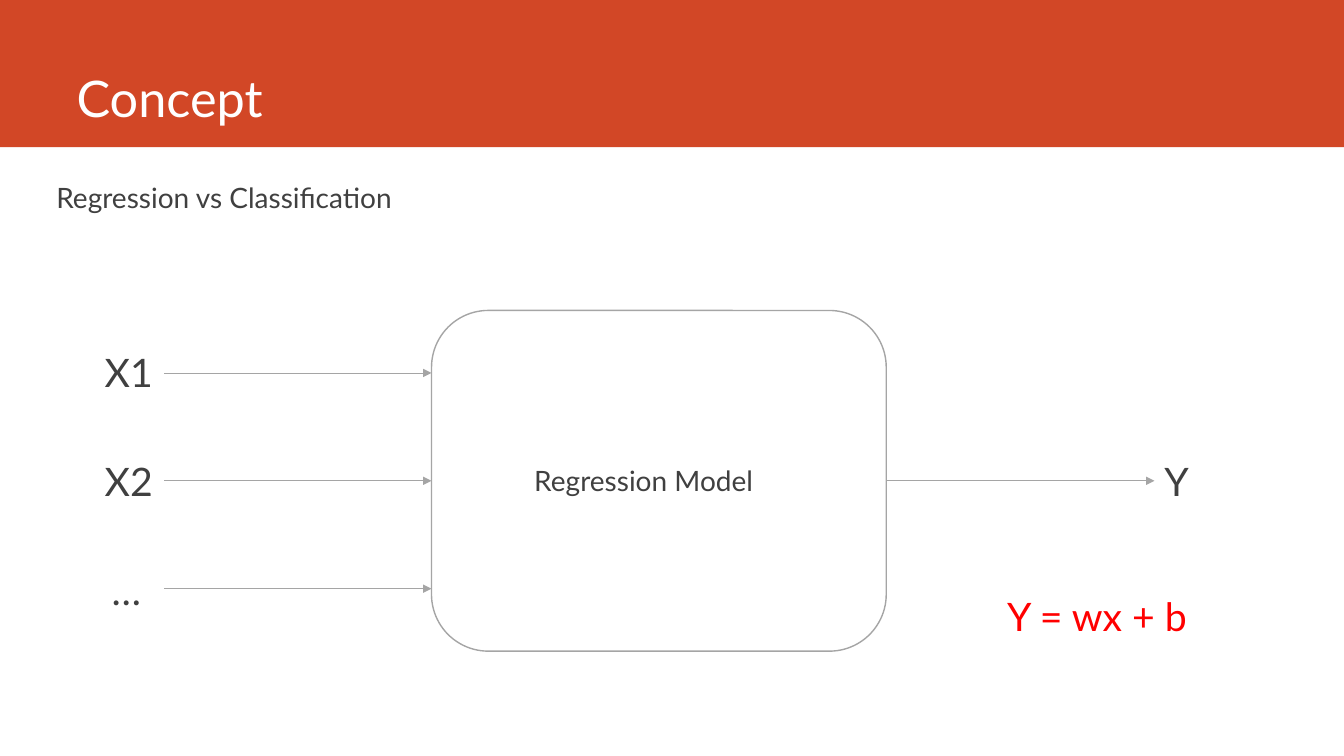
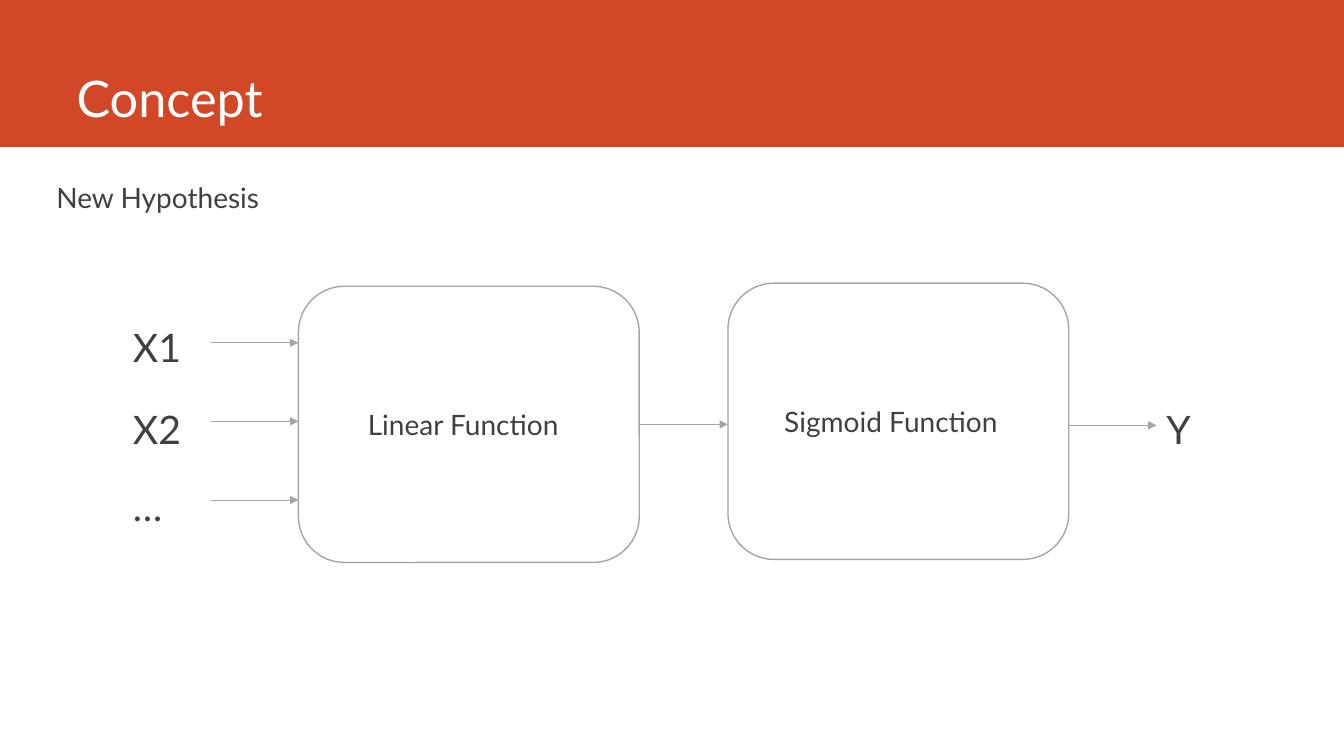
"""Build two slides that show a regression model and a new hypothesis as diagrams."""

from dataclasses import dataclass

from lxml.etree import SubElement
from pptx import Presentation
from pptx.dml.color import RGBColor
from pptx.enum.shapes import MSO_CONNECTOR, MSO_SHAPE
from pptx.enum.text import MSO_ANCHOR, MSO_AUTO_SIZE, PP_ALIGN
from pptx.oxml.ns import qn
from pptx.slide import Slide, SlideLayout
from pptx.text.text import TextFrame
from pptx.util import Inches, Pt


@dataclass(frozen=True)
class Theme:
    font: str = "Lato"
    band: RGBColor = RGBColor(0xD2, 0x47, 0x26)
    white: RGBColor = RGBColor(0xFF, 0xFF, 0xFF)
    text: RGBColor = RGBColor(0x40, 0x40, 0x40)
    accent: RGBColor = RGBColor(0xFF, 0x00, 0x00)
    line: RGBColor = RGBColor(0xA5, 0xA5, 0xA5)
    title_size: int = 36
    symbol_size: int = 28
    label_size: int = 20
    outline_width: float = 1
    arrow_width: float = 0.5


THEME = Theme()
SLIDE_WIDTH = 13.33
SLIDE_HEIGHT = 7.5
BAND_HEIGHT = 1.46


@dataclass(frozen=True)
class Label:
    text: str
    left: float
    top: float
    width: float = 0.8
    size: int = THEME.symbol_size
    color: RGBColor = THEME.text


@dataclass(frozen=True)
class Box:
    left: float
    top: float
    width: float
    height: float


@dataclass(frozen=True)
class Arrow:
    start: float
    end: float
    level: float


@dataclass(frozen=True)
class Diagram:
    title: str
    heading: str
    boxes: list[Box]
    arrows: list[Arrow]
    labels: list[Label]


def input_arrows(start: float, end: float, top: float, step: float) -> list[Arrow]:
    return [Arrow(start, end, top + index * step) for index in range(3)]


def format_text(text_frame: TextFrame, size: int, color: RGBColor) -> None:
    for paragraph in text_frame.paragraphs:
        paragraph.alignment = PP_ALIGN.LEFT
        for run in paragraph.runs:
            run.font.name = THEME.font
            run.font.size = Pt(size)
            run.font.color.rgb = color


def add_label(slide: Slide, label: Label) -> None:
    height = 0.57 if label.size == THEME.symbol_size else 0.44
    shape = slide.shapes.add_textbox(
        Inches(label.left), Inches(label.top), Inches(label.width), Inches(height)
    )
    shape.text_frame.word_wrap = True
    shape.text_frame.text = label.text
    format_text(shape.text_frame, label.size, label.color)


def add_box(slide: Slide, box: Box) -> None:
    shape = slide.shapes.add_shape(
        MSO_SHAPE.ROUNDED_RECTANGLE,
        Inches(box.left), Inches(box.top), Inches(box.width), Inches(box.height),
    )
    shape.shadow.inherit = False
    shape.fill.solid()
    shape.fill.fore_color.rgb = THEME.white
    shape.line.color.rgb = THEME.line
    shape.line.width = Pt(THEME.outline_width)


def add_arrow(slide: Slide, arrow: Arrow) -> None:
    level = Inches(arrow.level)
    connector = slide.shapes.add_connector(
        MSO_CONNECTOR.STRAIGHT, Inches(arrow.start), level, Inches(arrow.end), level
    )
    connector.line.color.rgb = THEME.line
    connector.line.width = Pt(THEME.arrow_width)
    SubElement(connector.line._get_or_add_ln(), qn("a:tailEnd"), type="triangle")
    SubElement(connector._element.spPr, qn("a:effectLst"))


def add_band(slide: Slide, layout: SlideLayout) -> None:
    """Draw the title band and move it to the back of the shared layout."""
    band = slide.shapes.add_shape(
        MSO_SHAPE.RECTANGLE, 0, 0, Inches(SLIDE_WIDTH), Inches(BAND_HEIGHT)
    )
    band.shadow.inherit = False
    band.fill.solid()
    band.fill.fore_color.rgb = THEME.band
    band.line.fill.background()
    layout.shapes._spTree.insert(2, band._element)


def add_title(slide: Slide, text: str) -> None:
    title = slide.shapes.title
    title.left, title.top = Inches(0.66), Inches(0)
    title.width, title.height = Inches(11.76), Inches(1.32)
    title.text_frame.text = text
    title.text_frame.vertical_anchor = MSO_ANCHOR.BOTTOM
    title.text_frame.auto_size = MSO_AUTO_SIZE.NONE
    format_text(title.text_frame, THEME.title_size, THEME.white)


def draw_diagram(slide: Slide, diagram: Diagram) -> None:
    add_title(slide, diagram.title)
    add_label(slide, Label(diagram.heading, 0.46, 1.74, 3.71, THEME.label_size))
    for box in diagram.boxes:
        add_box(slide, box)
    for arrow in diagram.arrows:
        add_arrow(slide, arrow)
    for label in diagram.labels:
        add_label(slide, label)


DIAGRAMS = [
    Diagram(
        title="Concept",
        heading="Regression vs Classification",
        boxes=[Box(4.28, 3.08, 4.51, 3.38)],
        arrows=[*input_arrows(1.63, 4.28, 3.7, 1.07), Arrow(8.79, 11.45, 4.77)],
        labels=[
            Label("X1", 0.94, 3.41),
            Label("X2", 0.94, 4.49),
            Label("…", 1.01, 5.57),
            Label("Y", 11.45, 4.49),
            Label("Y = wx + b", 9.89, 5.83, 2.2, color=THEME.accent),
            Label("Regression Model", 5.2, 4.55, 2.68, THEME.label_size),
        ],
    ),
    Diagram(
        title="Concept",
        heading="New Hypothesis",
        boxes=[Box(2.96, 2.84, 3.38, 2.74), Box(7.22, 2.81, 3.38, 2.74)],
        arrows=[
            *input_arrows(2.09, 2.96, 3.4, 0.78),
            Arrow(6.35, 7.22, 4.21),
            Arrow(10.6, 11.47, 4.22),
        ],
        labels=[
            Label("X1", 1.22, 3.16),
            Label("X2", 1.22, 3.97),
            Label("…", 1.22, 4.74),
            Label("Y", 11.47, 3.97),
            Label("Linear Function", 3.55, 3.99, 2.23, THEME.label_size),
            Label("Sigmoid Function", 7.68, 3.96, 2.46, THEME.label_size),
        ],
    ),
]


def main() -> None:
    presentation = Presentation()
    presentation.slide_width = Inches(SLIDE_WIDTH)
    presentation.slide_height = Inches(SLIDE_HEIGHT)
    layout = presentation.slide_layouts.get_by_name("Title Only")
    slides = [presentation.slides.add_slide(layout) for _ in DIAGRAMS]
    add_band(slides[0], layout)
    for slide, diagram in zip(slides, DIAGRAMS):
        draw_diagram(slide, diagram)
    presentation.save("out.pptx")


if __name__ == "__main__":
    main()
